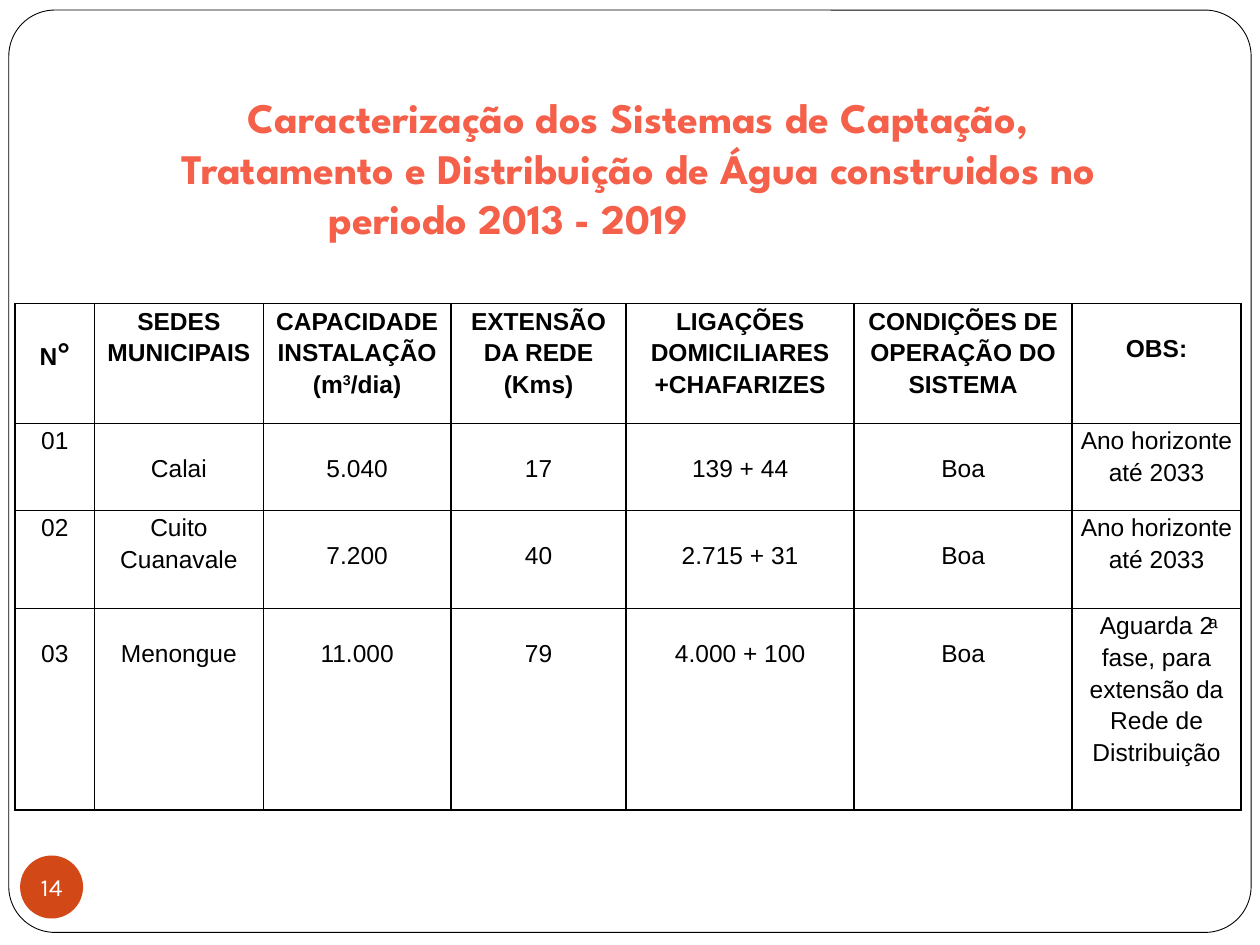
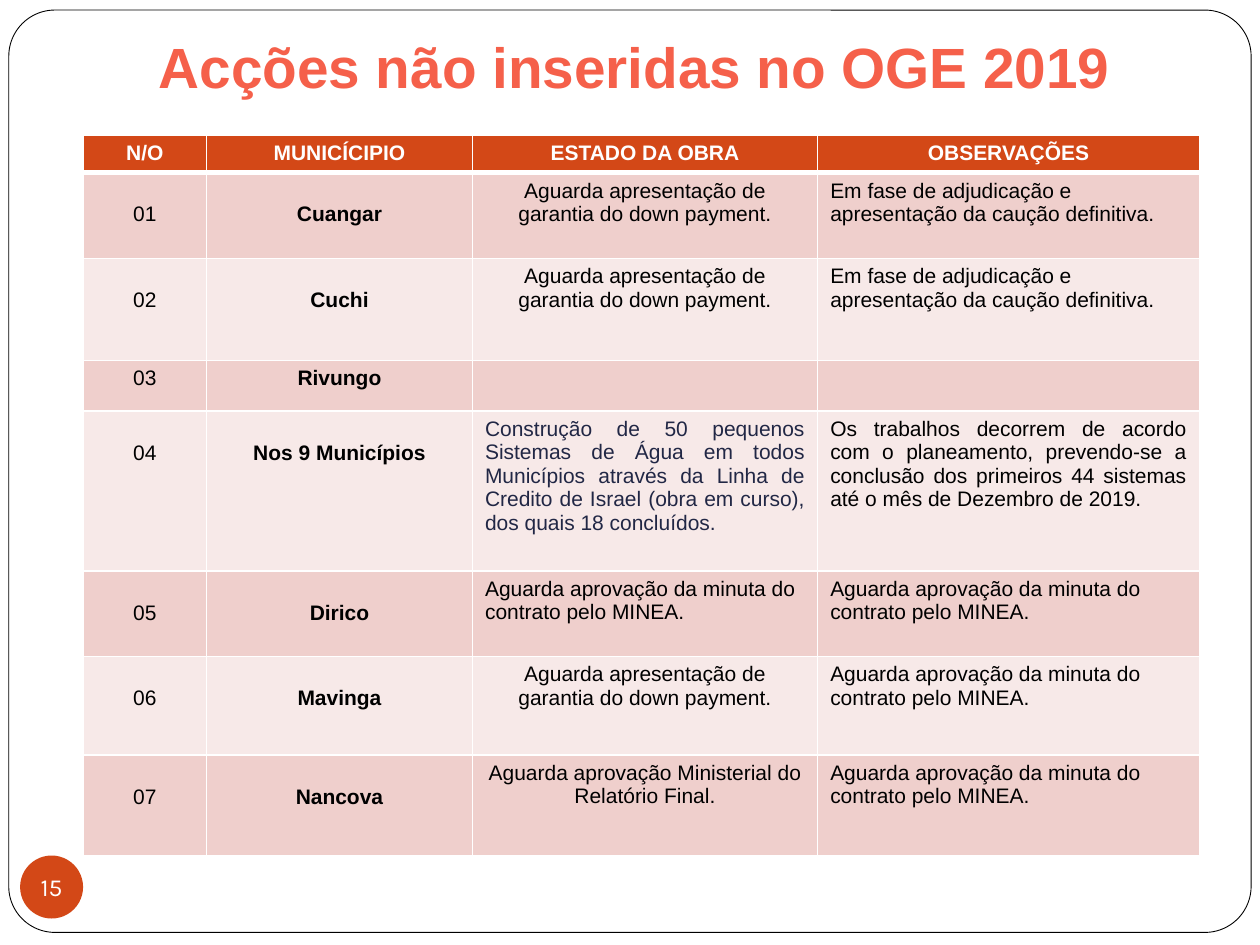
import pptx
import pptx.dml.color
import pptx.enum.shapes
import pptx.enum.text
import pptx.oxml
import pptx.oxml.ns
import pptx.util
from pptx.util import Inches

ALIGN = pptx.enum.text.PP_ALIGN
ANCHOR = pptx.enum.text.MSO_ANCHOR
SHAPE = pptx.enum.shapes.MSO_SHAPE

WHITE, BLACK, NAVY = "FFFFFF", "000000", "212745"
ORANGE, CORAL = "D34817", "F5604A"
BANDS = ("EFCFCC", "F7E9E8")


def rgb(value):
    """Return the colour for a hex string."""
    return pptx.dml.color.RGBColor.from_string(value)


def add_text(paragraph, text, size=14, font="Arial", color=BLACK, bold=False, raised=False):
    """Add a formatted run to a paragraph."""
    run = paragraph.add_run()
    run.text = text
    run.font.size = pptx.util.Pt(size)
    run.font.name = font
    run.font.bold = bold
    run.font.color.rgb = rgb(color)
    if raised:
        run._r.get_or_add_rPr().set("baseline", "30000")


def set_margins(target, left, top, right, bottom):
    """Set the inner margins of a text frame or a cell in inches."""
    target.margin_left, target.margin_top = Inches(left), Inches(top)
    target.margin_right, target.margin_bottom = Inches(right), Inches(bottom)


def set_borders(cell, color, bottom=1):
    """Draw all four borders of a cell."""
    properties = cell._tc.get_or_add_tcPr()
    for side, width in (("L", 1), ("R", 1), ("T", 1), ("B", bottom)):
        properties.append(pptx.oxml.parse_xml(
            f'<a:ln{side} {pptx.oxml.ns.nsdecls("a")} w="{pptx.util.Pt(width)}">'
            f'<a:solidFill><a:srgbClr val="{color}"/></a:solidFill></a:ln{side}>'))


class Deck:
    """Hold the shared style and the current slide."""

    def __init__(self):
        """Start an empty presentation."""
        self.presentation = pptx.Presentation()
        self.presentation.slide_width = Inches(10)
        self.presentation.slide_height = Inches(7.5)
        self.slide = None

    def add_slide(self, number):
        """Add a slide with its frame and number badge."""
        self.slide = self.presentation.slides.add_slide(self.presentation.slide_layouts[6])
        frame = self.add_shape(SHAPE.ROUNDED_RECTANGLE, 0.07, 0.08, 9.86, 7.32, WHITE, BLACK)
        frame.adjustments[0] = 0.05
        badge = self.add_shape(SHAPE.OVAL, 0.16, 6.79, 0.5, 0.5, ORANGE)
        text_frame = badge.text_frame
        set_margins(text_frame, 0, 0, 0, 0)
        text_frame.word_wrap = False
        text_frame.vertical_anchor = ANCHOR.MIDDLE
        paragraph = text_frame.paragraphs[0]
        paragraph.alignment = ALIGN.CENTER
        add_text(paragraph, str(number), font="Karla", color=WHITE)

    def add_shape(self, kind, left, top, width, height, fill, line=None):
        """Add a flat preset shape."""
        shape = self.slide.shapes.add_shape(
            kind, Inches(left), Inches(top), Inches(width), Inches(height))
        shape.shadow.inherit = False
        shape.fill.solid()
        shape.fill.fore_color.rgb = rgb(fill)
        if line:
            shape.line.color.rgb = rgb(line)
            shape.line.width = pptx.util.Pt(0.5)
        else:
            shape.line.fill.background()
        return shape

    def add_title(self, lines, left, top, width, height, size, font, last_indent=0):
        """Add a centred title whose last line may start at an indent."""
        box = self.slide.shapes.add_textbox(
            Inches(left), Inches(top), Inches(width), Inches(height))
        text_frame = box.text_frame
        text_frame.word_wrap = True
        for index, line in enumerate(lines):
            paragraph = text_frame.add_paragraph() if index else text_frame.paragraphs[0]
            paragraph.alignment = ALIGN.CENTER
            add_text(paragraph, line, size=size, font=font, color=CORAL, bold=True)
        if last_indent:
            paragraph.alignment = ALIGN.LEFT
            paragraph._p.get_or_add_pPr().set("marL", str(Inches(last_indent)))

    def add_table(self, left, top, widths, heights):
        """Add a table without style bands."""
        table = self.slide.shapes.add_table(
            len(heights), len(widths), Inches(left), Inches(top),
            Inches(sum(widths)), Inches(sum(heights))).table
        table.first_row = table.horz_banding = False
        for column, width in zip(table.columns, widths):
            column.width = Inches(width)
        for row, height in zip(table.rows, heights):
            row.height = Inches(height)
        return table

    def fill_cell(self, cell, paragraphs, margins, border, bottom=1, fill=None,
                  align=ALIGN.CENTER, spacing=None, **style):
        """Write paragraphs, given as lists of runs, and style the cell."""
        set_margins(cell, *margins)
        set_borders(cell, border, bottom)
        if fill:
            cell.fill.solid()
            cell.fill.fore_color.rgb = rgb(fill)
        else:
            cell.fill.background()
        if isinstance(paragraphs, str):
            paragraphs = [[(paragraphs, {})]]
        for index, runs in enumerate(paragraphs):
            paragraph = cell.text_frame.add_paragraph() if index else cell.text_frame.paragraphs[0]
            paragraph.alignment = align
            if spacing:
                paragraph.line_spacing = spacing
            for text, extra in runs:
                add_text(paragraph, text, **{**style, **extra})


def add_systems_slide(deck):
    """Build the slide on the water systems of 2013 to 2019."""
    deck.add_slide(14)
    deck.add_title(
        ["Caracterização dos Sistemas de Captação, Tratamento e Distribuição de Água construidos no",
         "periodo 2013 - 2019"],
        1.09, 0.68, 7.95, 1.34, 24, "League Spartan", last_indent=1.42)
    number_heading = [[("N", {}), ("°", {"size": 18})]]
    capacity_heading = [[("CAPACIDADE INSTALAÇÃO", {})],
                        [("(m", {}), ("3", {"raised": True}), ("/dia)", {})]]
    rows = [
        (number_heading, "SEDES MUNICIPAIS", capacity_heading, "EXTENSÃO DA REDE (Kms)",
         "LIGAÇÕES DOMICILIARES +CHAFARIZES", "CONDIÇÕES DE OPERAÇÃO DO SISTEMA", "OBS:"),
        ("01", "Calai", "5.040", "17", "139 + 44", "Boa", "Ano horizonte até 2033"),
        ("02", "Cuito Cuanavale", "7.200", "40", "2.715 + 31", "Boa", "Ano horizonte até 2033"),
        ("03", "Menongue", "11.000", "79", "4.000 + 100", "Boa",
         "Aguarda 2ͣ fase, para extensão da Rede de Distribuição"),
    ]
    lowered_columns = [(0, 6), range(1, 6), range(2, 6), range(6)]
    table = deck.add_table(0.12, 2.41, [0.63, 1.34, 1.49, 1.39, 1.81, 1.73, 1.34],
                           [0.95, 0.69, 0.78, 1.6])
    for row, (texts, lowered) in enumerate(zip(rows, lowered_columns)):
        for column, text in enumerate(texts):
            top = 0.22 if column in lowered else 0
            deck.fill_cell(table.cell(row, column), text, (0.05, top, 0.05, 0), BLACK,
                           spacing=1.15, bold=row == 0)


def add_actions_slide(deck):
    """Build the slide on actions outside the 2019 budget."""
    deck.add_slide(15)
    deck.add_title(["Acções não inseridas no OGE 2019"], 0.98, 0.2, 8.11, 0.64, 32.4, "Arial")
    guarantee = "Aguarda apresentação de garantia do down payment."
    award = "Em fase de adjudicação e apresentação da caução definitiva."
    approval = "Aguarda aprovação da minuta do contrato pelo MINEA."
    rows = [
        ("Cuangar", guarantee, award),
        ("Cuchi", guarantee, award),
        ("Rivungo", "", ""),
        ("Nos 9 Municípios",
         "Construção de 50 pequenos Sistemas de Água em todos Municípios através da Linha de "
         "Credito de Israel (obra em curso), dos quais 18 concluídos.",
         "Os trabalhos decorrem de acordo com o planeamento, prevendo-se a conclusão dos "
         "primeiros 44 sistemas até o mês de Dezembro de 2019."),
        ("Dirico", approval, approval),
        ("Mavinga", guarantee, approval),
        ("Nancova", "Aguarda aprovação Ministerial do Relatório Final.", approval),
    ]
    state_align = {"Nos 9 Municípios": ALIGN.JUSTIFY, "Dirico": ALIGN.LEFT}
    table = deck.add_table(0.66, 1.07, [0.98, 2.11, 2.74, 3.03],
                           [0.29, 0.68, 0.81, 0.4, 1.27, 0.68, 0.78, 0.8])
    margins = (0.1, 0.05, 0.1, 0.05)
    for column, heading in enumerate(("N/O", "MUNICÍCIPIO", "ESTADO DA OBRA", "OBSERVAÇÕES")):
        deck.fill_cell(table.cell(0, column), heading, margins, WHITE, bottom=3, fill=ORANGE,
                       size=12, color=WHITE, bold=True)
    for row, (town, state, remark) in enumerate(rows, start=1):
        remark_align = ALIGN.JUSTIFY if town == "Nos 9 Municípios" else ALIGN.LEFT
        aligns = (ALIGN.CENTER, ALIGN.CENTER, state_align.get(town, ALIGN.CENTER), remark_align)
        for column, text in enumerate((f"{row:02}", town, state, remark)):
            lowered = column < 2 and town != "Rivungo"
            navy = column == 2 and town == "Nos 9 Municípios"
            deck.fill_cell(table.cell(row, column), text if text else [],
                           (0.1, 0.24 if lowered else 0.05, 0.1, 0.05), WHITE,
                           fill=BANDS[(row - 1) % 2], align=aligns[column], size=12,
                           color=NAVY if navy else BLACK, bold=column == 1)


def main():
    """Build and save the presentation."""
    deck = Deck()
    add_systems_slide(deck)
    add_actions_slide(deck)
    deck.presentation.save("out.pptx")


if __name__ == "__main__":
    main()
